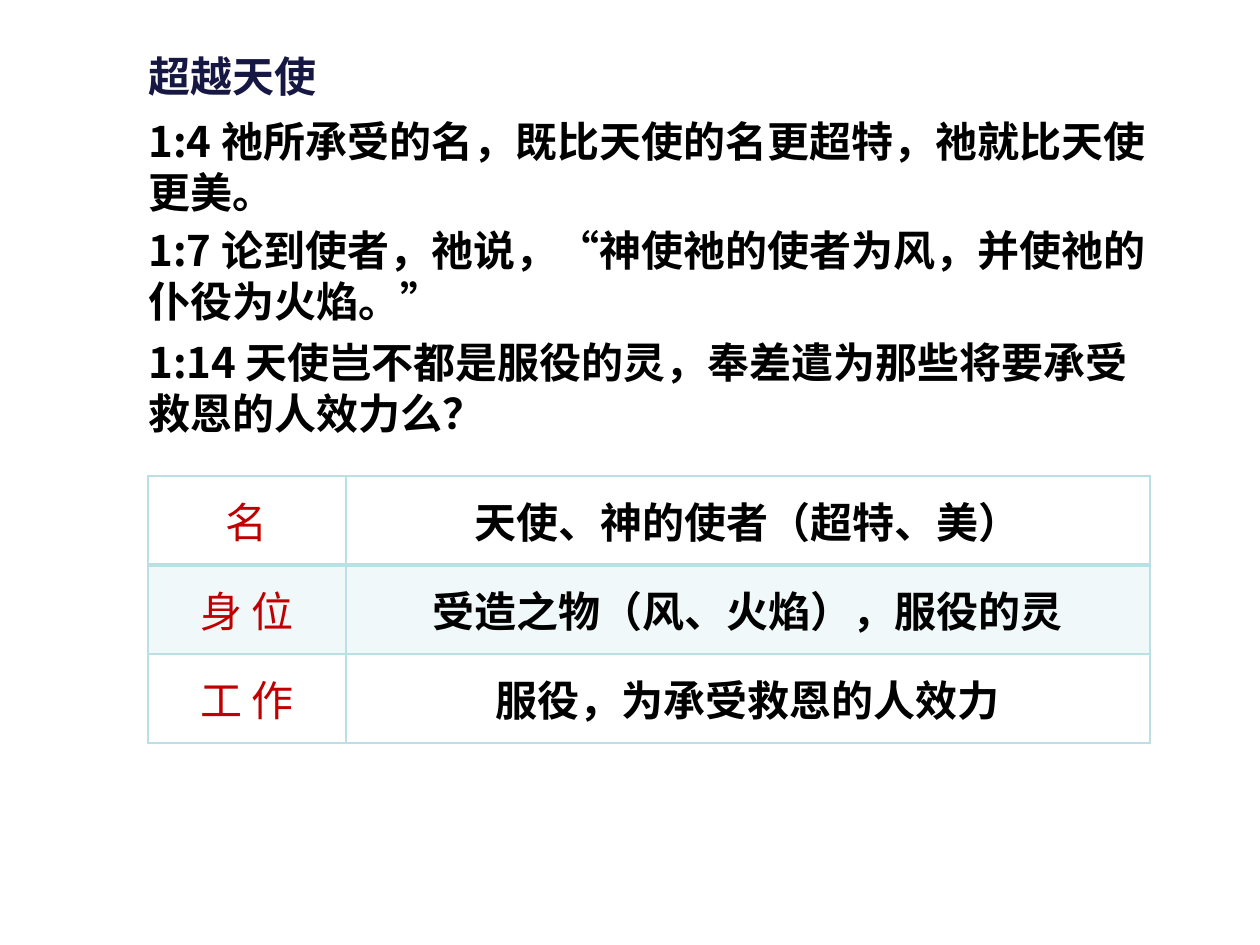
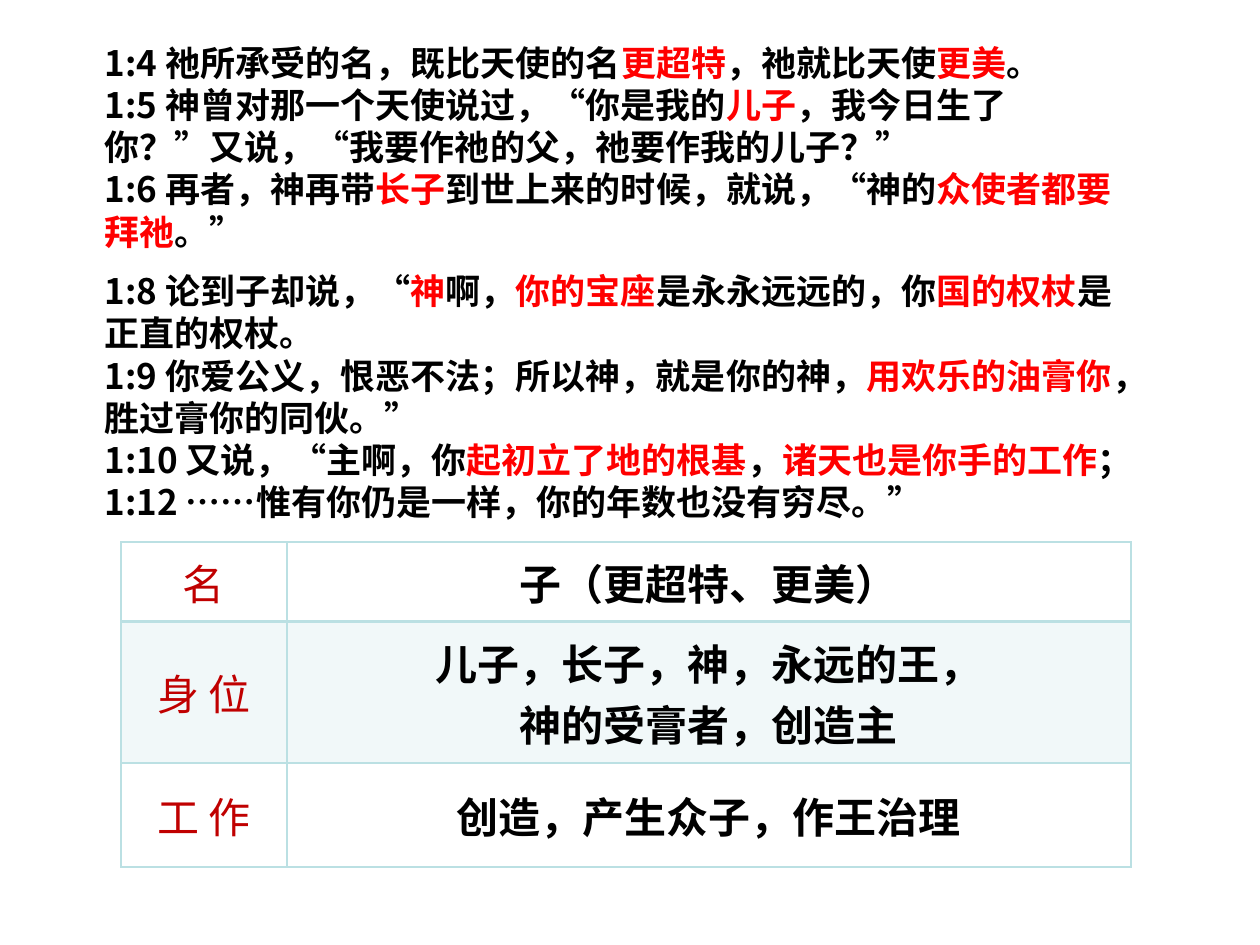
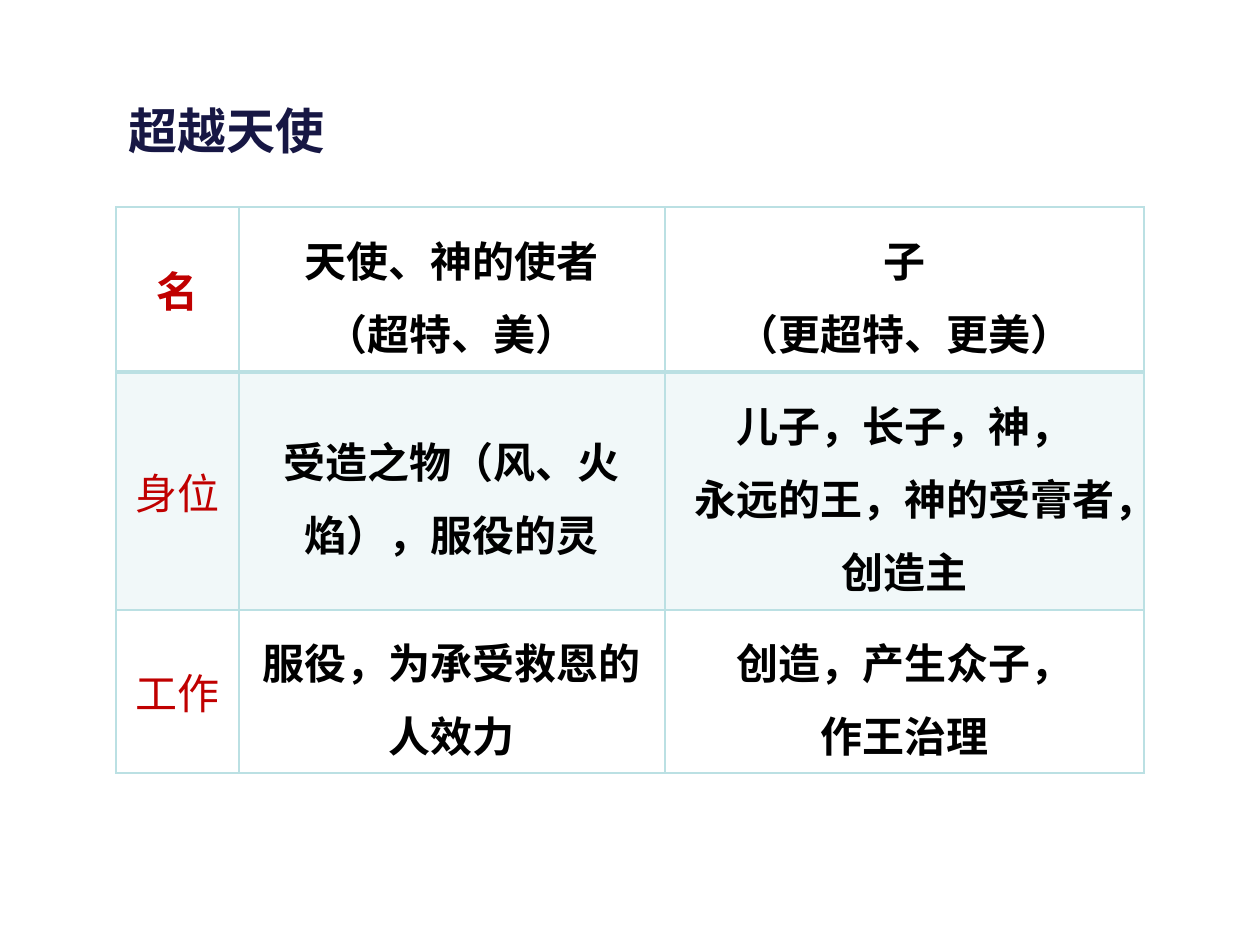
from lxml.etree import SubElement
from pptx import Presentation
from pptx.dml.color import RGBColor
from pptx.enum.text import MSO_ANCHOR as Anchor, MSO_AUTO_SIZE as AutoSize, PP_ALIGN as Align
from pptx.oxml.ns import qn
from pptx.util import Emu, Pt

# Shared look
CJK, LATIN = "Noto Sans CJK SC", "Arial"
NAVY, BLACK, RED, DARK_RED, TEAL = "171744", "000000", "FF0000", "C00000", "BBE0E3"
TITLE = "超越天使"
LEADING = 1.2


def px(length):
    return Emu(round(length * 914400 / 126))


def color(hex_code):
    return RGBColor.from_string(hex_code)


def style(para, size, hex_code, bold, face=CJK):
    font = para.font
    font.size, font.bold, font.name = Pt(size), bold, face
    font.color.rgb = color(hex_code)
    defaults = para._p.pPr.find(qn("a:defRPr"))
    SubElement(defaults, qn("a:ea"), typeface=CJK)


def add_text(page, left, top, width, height, lines, size, hex_code=BLACK, wrap=True):
    """Bold text; parts between asterisks are red."""
    box = page.shapes.add_textbox(px(left), px(top), px(width), px(height))
    frame = box.text_frame
    frame.word_wrap = wrap
    frame.auto_size = AutoSize.SHAPE_TO_FIT_TEXT
    frame.margin_top, frame.margin_bottom = px(8), px(4)
    for index, line in enumerate(lines):
        para = frame.paragraphs[0] if index == 0 else frame.add_paragraph()
        para.line_spacing = Pt(size * LEADING)
        style(para, size, hex_code, True)
        for part, words in enumerate(line.split("*")):
            span = para.add_run()
            span.text = words
            if part % 2:
                span.font.color.rgb = color(RED)


def add_border(cell, side, points):
    edge = SubElement(cell._tc.get_or_add_tcPr(), qn("a:ln" + side), w=str(Pt(points)))
    fill = SubElement(edge, qn("a:solidFill"))
    SubElement(fill, qn("a:srgbClr"), val=TEAL)


def shade(cell):
    cell.fill.solid()
    cell.fill.fore_color.rgb = color(TEAL)
    tint = cell._tc.tcPr.find(".//" + qn("a:solidFill") + "[last()]")
    tint = cell._tc.tcPr.find(qn("a:solidFill")).find(qn("a:srgbClr"))
    SubElement(tint, qn("a:alpha"), val="20000")


def fill_cell(cell, text, is_label, bold, spacing):
    cell.vertical_anchor = Anchor.MIDDLE
    cell.text = text
    for para in cell.text_frame.paragraphs:
        para.alignment = Align.CENTER
        if is_label:
            style(para, 24, DARK_RED, bold)
        else:
            para.line_spacing = spacing
            style(para, 24, BLACK, True, LATIN)


def add_grid(page, left, top, widths, heights, rows, spacing=None, bold_head=False):
    frame = page.shapes.add_table(len(rows), len(widths), px(left), px(top),
                                  px(sum(widths)), px(sum(heights)))
    table = frame.table
    table.first_row = table.horz_banding = False
    for column, width in zip(table.columns, widths):
        column.width = px(width)
    for r, (height, texts) in enumerate(zip(heights, rows)):
        table.rows[r].height = px(height)
        for c, text in enumerate(texts):
            cell = table.cell(r, c)
            fill_cell(cell, text, c == 0, bold_head and r == 0, spacing)
            # The line under the first row is twice as thick
            for side in "LRTB":
                thick = (r, side) in ((0, "B"), (1, "T"))
                add_border(cell, side, 2 if thick else 1)
            if r == 1:
                shade(cell)
            else:
                cell.fill.background()


def angels_page(page):
    add_text(page, 136, 43, 194, 63, [TITLE], 24, NAVY, wrap=False)
    verses = (
        (108, "1:4 祂所承受的名，既比天使的名更超特，祂就比天使更美。"),
        (217, "1:7 论到使者，祂说，“神使祂的使者为风，并使祂的仆役为火焰。”"),
        (329, "1:14 天使岂不都是服役的灵，奉差遣为那些将要承受救恩的人效力么？"),
    )
    for top, verse in verses:
        add_text(page, 136, top, 1029, 115, [verse], 24)
    add_grid(page, 148, 476, (198, 804), (89, 89, 89), (
        ("名", "天使、神的使者（超特、美）"),
        ("身 位", "受造之物（风、火焰），服役的灵"),
        ("工 作", "服役，为承受救恩的人效力"),
    ))


def son_page(page):
    add_text(page, 92, 34, 1066, 224, [
        "1:4 祂所承受的名，既比天使的名*更超特*，祂就比天使*更美*。",
        "1:5 神曾对那一个天使说过，“你是我的*儿子*，我今日生了你？”又说，“我要作祂的父，祂要作我的儿子？”",
        "1:6 再者，神再带*长子*到世上来的时候，就说，“神的*众使者都要拜祂*。”",
    ], 20)
    add_text(page, 92, 262, 1066, 267, [
        "1:8 论到子却说，“*神*啊，*你的宝座*是永永远远的，你*国的权杖*是正直的权杖。",
        "1:9 你爱公义，恨恶不法；所以神，就是你的神，*用欢乐的油膏你*，胜过膏你的同伙。”",
        "1:10 又说，“主啊，你*起初立了地的根基*，*诸天也是你手的工作*；",
        "1:12 ……惟有你仍是一样，你的年数也没有穷尽。”",
    ], 20)
    add_grid(page, 121, 542, (166, 844), (80, 141, 104), (
        ("名", "子（更超特、更美）"),
        ("身 位", "儿子，长子，神，永远的王，\n神的受膏者，创造主"),
        ("工 作", "创造，产生众子，作王治理"),
    ))


def comparison_page(page):
    add_grid(page, 116, 207, (123, 426, 479), (165, 238, 163), (
        ("名", "天使、神的使者\n（超特、美）", "子\n（更超特、更美）"),
        ("身位", "受造之物（风、火焰），服役的灵",
         "儿子，长子，神，\n永远的王，神的受膏者，创造主"),
        ("工作", "服役，为承受救恩的人效力", "创造，产生众子，\n作王治理"),
    ), spacing=LEADING, bold_head=True)
    add_text(page, 116, 93, 222, 72, [TITLE], 28, NAVY, wrap=False)


def main():
    deck = Presentation()
    deck.slide_width, deck.slide_height = px(1260), px(945)
    for build in (angels_page, son_page, comparison_page):
        build(deck.slides.add_slide(deck.slide_layouts[6]))
    deck.save("out.pptx")


if __name__ == "__main__":
    main()
